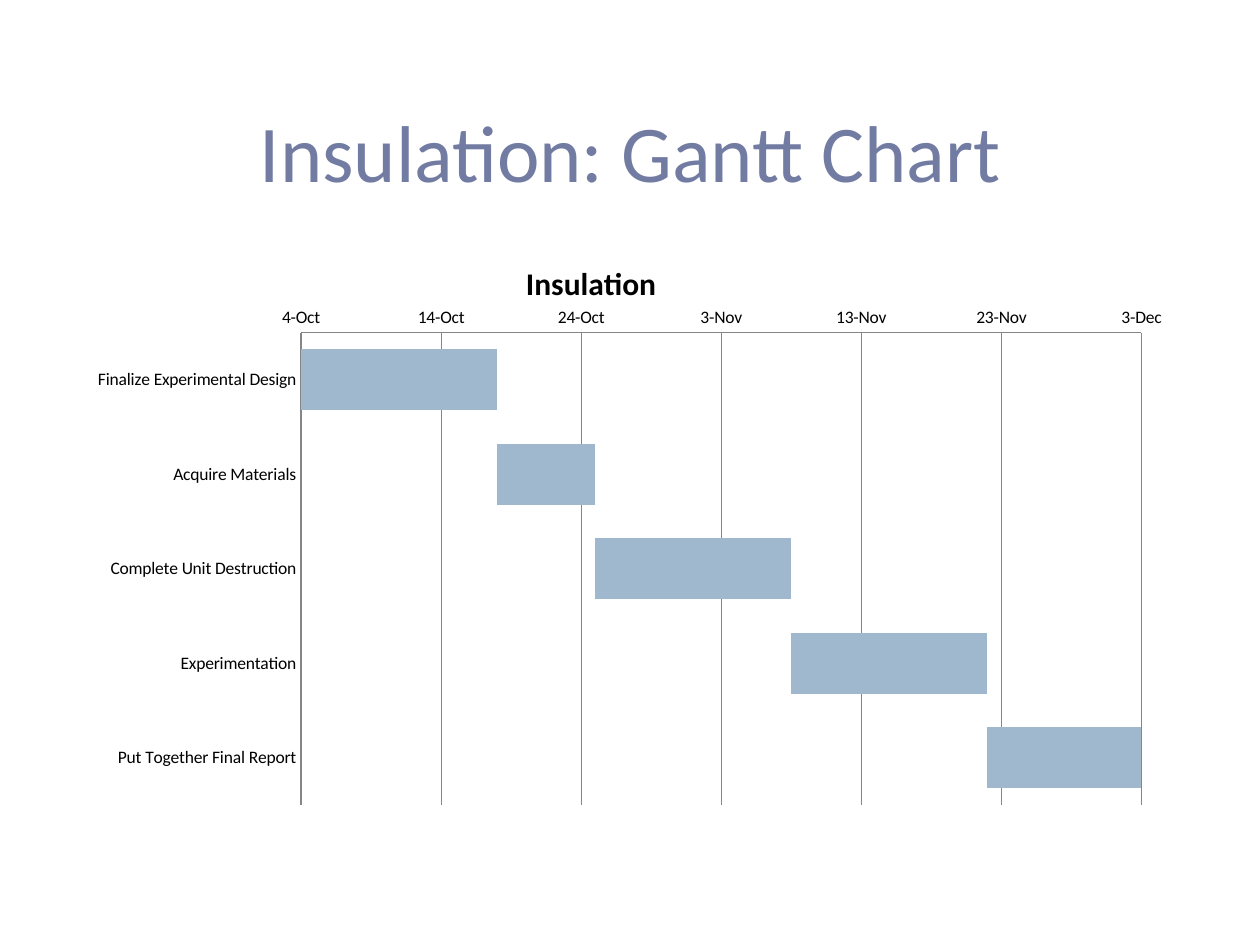
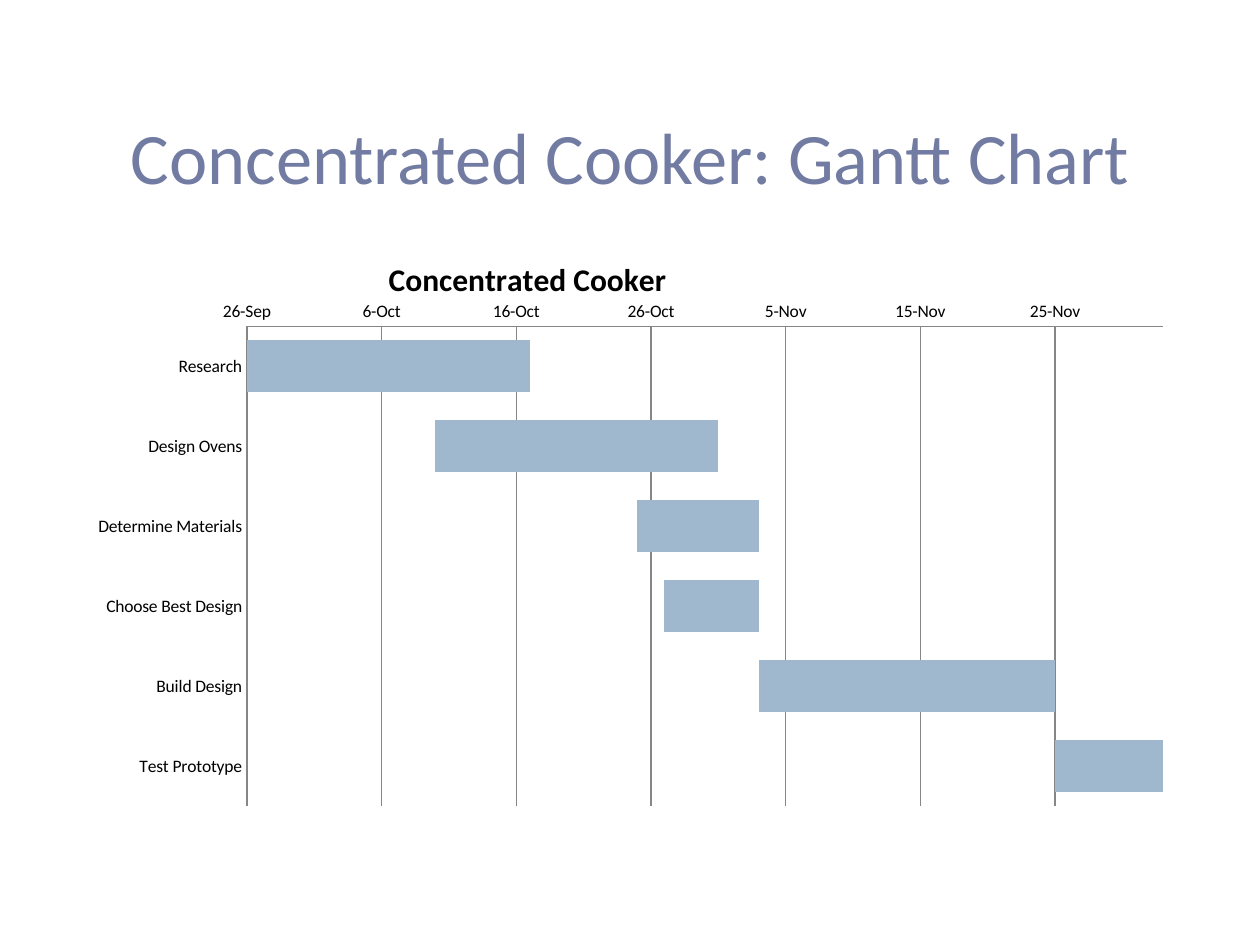
from pptx import Presentation
from pptx.chart.data import CategoryChartData
from pptx.dml.color import RGBColor
from pptx.enum.chart import XL_CHART_TYPE as ChartType, XL_TICK_MARK as TickMark
from pptx.enum.text import MSO_ANCHOR as Anchor, PP_ALIGN as Align
from pptx.oxml import parse_xml
from pptx.oxml.ns import nsdecls
from pptx.util import Emu, Pt

PX = 9144  # EMU per px, at 100 px to the inch
FONT = "Calibri"
BLACK = RGBColor(0x00, 0x00, 0x00)
TITLE_BLUE = RGBColor(0x72, 0x7C, 0xA3)
BAR_BLUE = RGBColor(0x9F, 0xB8, 0xCD)
GRID_GRAY = RGBColor(0x86, 0x86, 0x86)

TITLE_AREA = (60, 12, 880, 146)
CHART_AREA = (60, 175, 880, 475)

# Dates are day serial numbers; each task is (name, start, days).
# Title corner and plot area are px inside the chart.
SCHEDULES = [
    dict(name="Insulation", title_size=46, first=40455, last=40515,
         title_at=(353, 28), plot=(179, 89, 667, 375),
         tasks=[("Finalize Experimental Design", 40455, 14),
                ("Acquire Materials", 40469, 7),
                ("Complete Unit Destruction", 40476, 14),
                ("Experimentation", 40490, 14),
                ("Put Together Final Report", 40504, 11)]),
    dict(name="Concentrated Cooker", title_size=41.4, first=40447, last=40515,
         title_at=(244, 25), plot=(136, 84, 727, 381),
         tasks=[("Research", 40447, 21),
                ("Design Ovens", 40461, 21),
                ("Determine Materials", 40476, 9),
                ("Choose Best Design", 40478, 7),
                ("Build Design", 40485, 22),
                ("Test Prototype", 40507, 9)]),
]


def set_all(target, values):
    for name, value in values.items():
        setattr(target, name, value)


def to_emu(lengths):
    return [Emu(length * PX) for length in lengths]


def manual_layout(numbers, inner=False):
    """Return a c:layout element for px measured inside the chart."""
    sizes = CHART_AREA[2:] * 2
    parts = ['<c:layoutTarget val="inner"/>'] if inner else []
    parts += ['<c:xMode val="edge"/>', '<c:yMode val="edge"/>']
    parts += [f'<c:{tag} val="{number / size:.4f}"/>'
              for tag, number, size in zip("xywh", numbers, sizes)]
    return parse_xml(f'<c:layout {nsdecls("c")}><c:manualLayout>'
                     f'{"".join(parts)}</c:manualLayout></c:layout>')


def replace_layout(parent, layout, index):
    for old in parent.findall(layout.tag):
        parent.remove(old)
    parent.insert(index, layout)


class GanttDeck:
    def __init__(self):
        self.deck = Presentation()
        set_all(self.deck, dict(slide_width=Emu(1000 * PX), slide_height=Emu(750 * PX)))
        self.page = None

    def add_page(self):
        self.page = self.deck.slides.add_slide(self.deck.slide_layouts[6])

    def style_font(self, font, size, color, bold=False):
        set_all(font, dict(name=FONT, size=Pt(size), bold=bold))
        font.color.rgb = color

    def title(self, text, size):
        box = self.page.shapes.add_textbox(*to_emu(TITLE_AREA))
        frame = box.text_frame
        set_all(frame, dict(word_wrap=True, vertical_anchor=Anchor.BOTTOM,
                            margin_top=0, margin_bottom=0))
        para = frame.paragraphs[0]
        para.alignment = Align.CENTER
        span = para.add_run()
        span.text = text
        self.style_font(span.font, size, TITLE_BLUE)

    def gantt(self, name, tasks, first, last, title_at, plot):
        """Draw stacked bars whose first, unfilled part reaches the start date."""
        labels, starts, days = zip(*tasks)
        data = CategoryChartData()
        data.categories = labels
        data.add_series("Series 1", starts)
        data.add_series("Series 2", days)
        chart = self.page.shapes.add_chart(
            ChartType.BAR_STACKED, *to_emu(CHART_AREA), data).chart
        chart.has_legend = False
        self.style_font(chart.font, 10, BLACK)
        self.chart_title(chart, name, title_at)
        self.bars(chart.plots[0])
        self.axes(chart, first, last)
        replace_layout(chart.plots[0]._element.getparent(),
                       manual_layout(plot, inner=True), 0)

    def chart_title(self, chart, text, corner):
        heading = chart.chart_title
        para = heading.text_frame.paragraphs[0]
        span = para.add_run()
        span.text = text
        self.style_font(span.font, 18, BLACK, bold=True)
        replace_layout(heading._element, manual_layout(corner), 1)

    def bars(self, plot):
        set_all(plot, dict(gap_width=55, overlap=100, vary_by_categories=False))
        offset, duration = plot.series
        offset.format.fill.background()
        offset.format.line.fill.background()
        duration.format.fill.solid()
        duration.format.fill.fore_color.rgb = BAR_BLUE

    def axes(self, chart, first, last):
        tasks, dates = chart.category_axis, chart.value_axis
        tasks.reverse_order = True
        set_all(dates, dict(minimum_scale=first, maximum_scale=last, major_unit=10,
                            has_major_gridlines=True))
        set_all(dates.tick_labels, dict(number_format="d\\-mmm",
                                        number_format_is_linked=False))
        for axis in (tasks, dates):
            set_all(axis, dict(major_tick_mark=TickMark.NONE,
                               minor_tick_mark=TickMark.NONE))
        for part in (tasks, dates, dates.major_gridlines):
            line = part.format.line
            line.color.rgb = GRID_GRAY
            line.width = Pt(0.75)


def main():
    gantt_deck = GanttDeck()
    for schedule in SCHEDULES:
        values = dict(schedule)
        gantt_deck.add_page()
        gantt_deck.title(f"{values['name']}: Gantt Chart", values.pop("title_size"))
        gantt_deck.gantt(**values)
    gantt_deck.deck.save("out.pptx")


if __name__ == "__main__":
    main()
